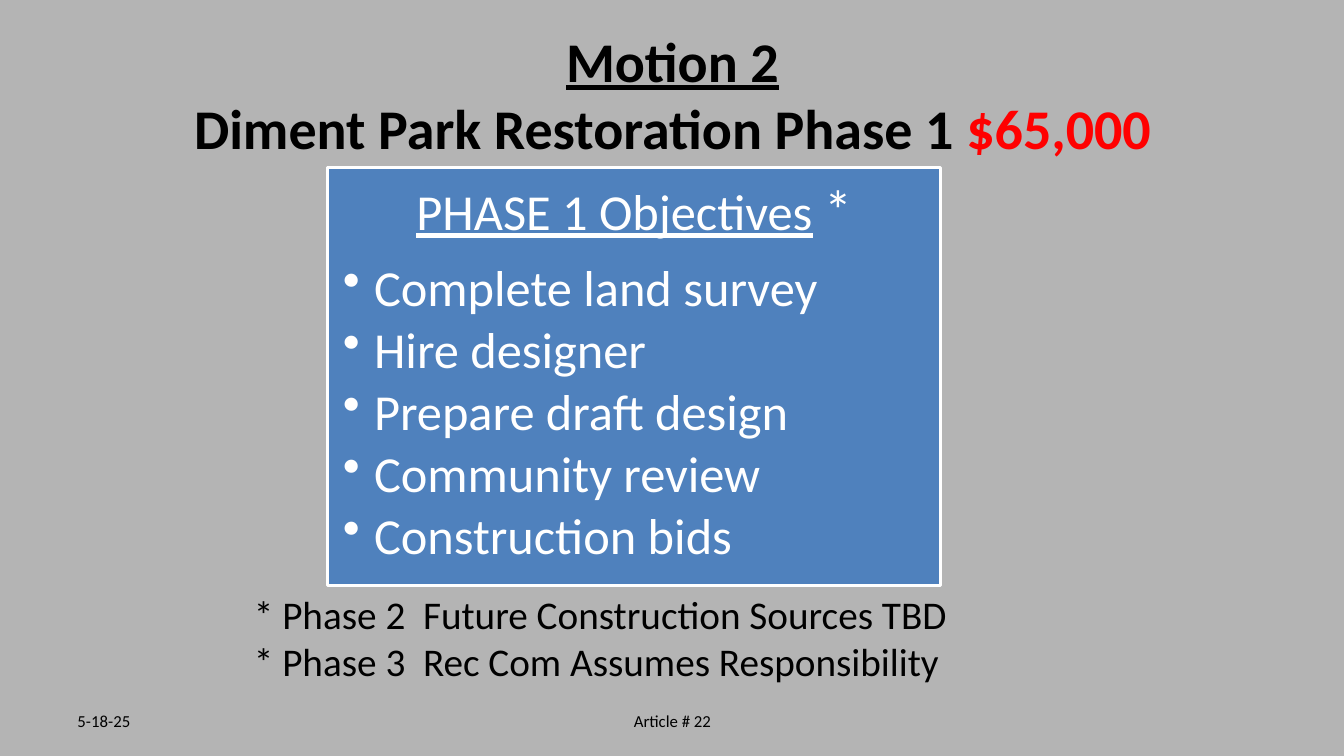
from lxml.etree import SubElement
from pptx import Presentation
from pptx.dml.color import RGBColor
from pptx.enum.shapes import MSO_SHAPE
from pptx.enum.text import MSO_ANCHOR, PP_ALIGN
from pptx.oxml.ns import qn
from pptx.util import Inches, Pt

GRAY = RGBColor(0xB4, 0xB4, 0xB4)
BLUE = RGBColor(0x4F, 0x81, 0xBD)
WHITE = RGBColor(0xFF, 0xFF, 0xFF)
BLACK = RGBColor(0x00, 0x00, 0x00)
RED = RGBColor(0xFF, 0x00, 0x00)

OBJECTIVES = [
    "Complete land survey",
    "Hire designer",
    "Prepare draft design",
    "Community review",
    "Construction bids",
]
LATER_PHASES = [
    "* Phase 2  Future Construction Sources TBD",
    "* Phase 3  Rec Com Assumes Responsibility",
]


def style(para, size, color, align=PP_ALIGN.LEFT):
    para.alignment = align
    para.font.name = "Calibri"
    para.font.size = Pt(size)
    para.font.color.rgb = color


def add_span(para, text):
    span = para.add_run()
    span.text = text
    return span


def add_text_frame(page, box, anchor):
    frame = page.shapes.add_textbox(*map(Inches, box)).text_frame
    frame.word_wrap = True
    frame.vertical_anchor = anchor
    return frame


def add_title(page, box):
    para = add_text_frame(page, box, MSO_ANCHOR.MIDDLE).paragraphs[0]
    style(para, 40, BLACK, PP_ALIGN.CENTER)
    para.font.bold = True
    add_span(para, "Motion 2").font.underline = True
    para.add_line_break()
    add_span(para, "Diment Park Restoration Phase 1 ")
    add_span(para, "$65,000").font.color.rgb = RED


def add_bullet(para, indent):
    properties = para._p.get_or_add_pPr()
    properties.set("marL", str(indent))
    properties.set("indent", str(-indent))
    SubElement(properties, qn("a:buChar")).set("char", "•")


def add_objectives(page, box):
    card = page.shapes.add_shape(MSO_SHAPE.RECTANGLE, *map(Inches, box))
    card.shadow.inherit = False
    card.fill.solid()
    card.fill.fore_color.rgb = BLUE
    card.line.color.rgb = WHITE
    card.line.width = Pt(2)

    frame = card.text_frame
    frame.word_wrap = True
    frame.vertical_anchor = MSO_ANCHOR.TOP
    frame.margin_left = frame.margin_right = Inches(0.15)
    frame.margin_top = frame.margin_bottom = Inches(0.15)

    heading = frame.paragraphs[0]
    style(heading, 36, WHITE, PP_ALIGN.CENTER)
    heading.line_spacing = 0.9
    heading.space_after = Pt(14)
    add_span(heading, "PHASE 1 Objectives").font.underline = True
    add_span(heading, " ")
    add_span(heading, "*").font.size = Pt(40)

    for objective in OBJECTIVES:
        para = frame.add_paragraph()
        para.text = objective
        para.level = 1
        para.line_spacing = 0.9
        para.space_after = Pt(5.4)
        add_bullet(para, Inches(0.31))
        style(para, 36, WHITE, PP_ALIGN.JUSTIFY)


def add_later_phases(page, box):
    frame = add_text_frame(page, box, MSO_ANCHOR.TOP)
    frame.text = "\n".join(LATER_PHASES)
    for para in frame.paragraphs:
        style(para, 28, BLACK)


def add_footer(page, box, text, align):
    frame = add_text_frame(page, box, MSO_ANCHOR.MIDDLE)
    frame.text = text
    style(frame.paragraphs[0], 12, BLACK, align)


def main():
    deck = Presentation()
    deck.slide_width = Inches(13.33)
    deck.slide_height = Inches(7.5)
    page = deck.slides.add_slide(deck.slide_layouts[6])
    page.background.fill.solid()
    page.background.fill.fore_color.rgb = GRAY

    add_title(page, (0.67, 0.3, 12, 1.25))
    add_objectives(page, (3.25, 1.66, 6.08, 4.15))
    add_footer(page, (0.67, 6.95, 3.11, 0.4), "5-18-25", PP_ALIGN.LEFT)
    add_footer(page, (4.56, 6.95, 4.22, 0.4), "Article # 22", PP_ALIGN.CENTER)
    add_later_phases(page, (2.42, 5.81, 9.28, 1.04))
    deck.save("out.pptx")


if __name__ == "__main__":
    main()
